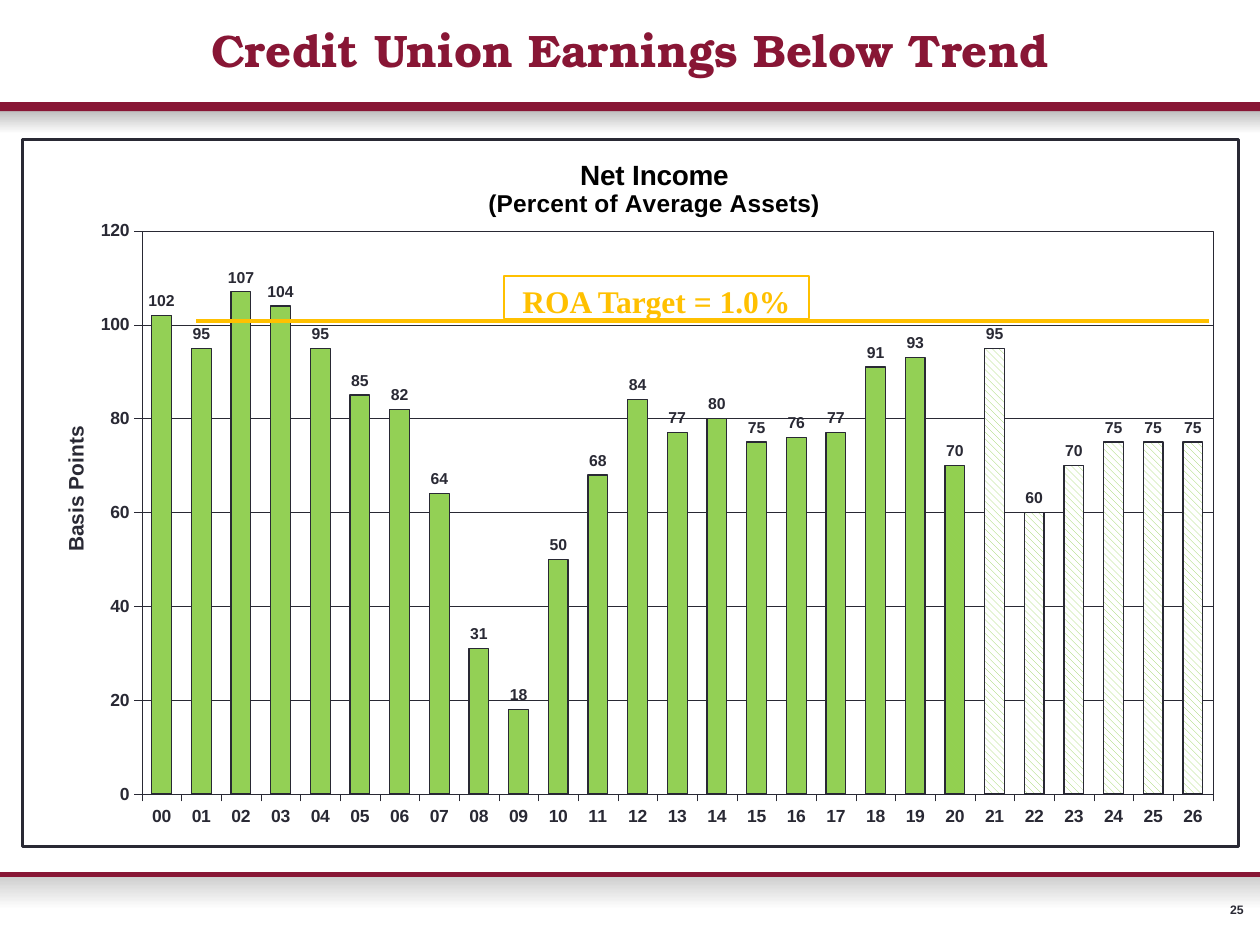
import collections
import lxml.etree
import pptx
import pptx.chart.data
import pptx.dml.color
import pptx.enum.chart
import pptx.enum.dml
import pptx.enum.shapes
import pptx.enum.text
import pptx.oxml
import pptx.oxml.ns
import pptx.util

Cm = pptx.util.Cm
Pt = pptx.util.Pt
qn = pptx.oxml.ns.qn
Box = collections.namedtuple("Box", "left top width height")

MAROON, INK, GREEN, GOLD, WHITE = "881635", "292934", "93D055", "FFC000", "FFFFFF"
INCOME = [102, 95, 107, 104, 95, 85, 82, 64, 31, 18, 50, 68, 84, 77, 80,
          75, 76, 77, 91, 93, 70, 95, 60, 70, 75, 75, 75]
FIRST_PATTERNED = 20


def color(value):
    return pptx.dml.color.RGBColor.from_string(value)


def set_font(font, name, size, value):
    font.name = name
    font.size = Pt(size)
    font.bold = True
    font.color.rgb = color(value)


def set_line(line, value, width):
    line.color.rgb = color(value)
    line.width = Pt(width)


def centimetres(box):
    return [Cm(length) for length in box]


def add_rectangle(page, box, fill):
    shape = page.shapes.add_shape(
        pptx.enum.shapes.MSO_SHAPE.RECTANGLE, *centimetres(box))
    shape.shadow.inherit = False
    shape.fill.solid()
    shape.fill.fore_color.rgb = color(fill)
    shape.line.fill.background()
    return shape


def add_rule(page, box, rule_height, shade):
    band = add_rectangle(page, Box(box.left, box.top + rule_height, box.width,
                                   box.height - rule_height), WHITE)
    band.fill.gradient()
    band.fill.gradient_angle = 270
    for stop, value in zip(band.fill.gradient_stops, (shade, WHITE)):
        stop.color.rgb = color(value)
    add_rectangle(page, box._replace(height=rule_height), MAROON)


def add_title(page, box):
    title = page.shapes.title
    title.left, title.top, title.width, title.height = centimetres(box)
    frame = title.text_frame
    frame.text = "Credit Union Earnings Below Trend"
    frame.vertical_anchor = pptx.enum.text.MSO_ANCHOR.MIDDLE
    para = frame.paragraphs[0]
    para.alignment = pptx.enum.text.PP_ALIGN.CENTER
    set_font(para.font, "TeX Gyre Bonum", 26, MAROON)


def add_page_number(page, box):
    frame = page.shapes.add_textbox(*centimetres(box)).text_frame
    frame.margin_left = frame.margin_right = 0
    frame.margin_top = frame.margin_bottom = 0
    frame.word_wrap = False
    frame.vertical_anchor = pptx.enum.text.MSO_ANCHOR.MIDDLE
    para = frame.paragraphs[0]
    para.text = "25"
    para.alignment = pptx.enum.text.PP_ALIGN.RIGHT
    set_font(para.font, "Arial", 7, INK)


def set_layout(element, target=None, **fractions):
    for old in element.findall(qn("c:layout")):
        element.remove(old)
    layout = lxml.etree.Element(qn("c:layout"))
    manual = lxml.etree.SubElement(layout, qn("c:manualLayout"))
    settings = {"layoutTarget": target} if target else {}
    settings.update(xMode="edge", yMode="edge", **fractions)
    for name, value in settings.items():
        lxml.etree.SubElement(manual, qn("c:" + name)).set("val", str(value))
    text = element.find(qn("c:tx"))
    if text is None:
        element.insert(0, layout)
    else:
        text.addnext(layout)


def outline(width):
    namespaces = pptx.oxml.ns.nsdecls("c", "a")
    return pptx.oxml.parse_xml(
        f'<c:spPr {namespaces}><a:noFill/><a:ln w="{Pt(width)}"><a:solidFill>'
        f'<a:srgbClr val="{INK}"/></a:solidFill></a:ln></c:spPr>')


def format_axes(chart):
    for axis in (chart.category_axis, chart.value_axis):
        axis.major_tick_mark = pptx.enum.chart.XL_TICK_MARK.OUTSIDE
        axis.minor_tick_mark = pptx.enum.chart.XL_TICK_MARK.NONE
        set_font(axis.tick_labels.font, "Arial", 10, INK)
        set_line(axis.format.line, INK, 0.18)
    axis = chart.value_axis
    axis.minimum_scale, axis.maximum_scale, axis.major_unit = 0, 120, 20
    set_line(axis.major_gridlines.format.line, INK, 0.18)
    para = axis.axis_title.text_frame.paragraphs[0]
    para.text = "Basis Points"
    set_font(para.font, "Arial", 12, INK)
    set_layout(axis.axis_title.element, x=0.03, y=0.4)


def format_series(plot):
    plot.gap_width = 100
    plot.vary_by_categories = False
    series = plot.series[0]
    series.format.fill.solid()
    series.format.fill.fore_color.rgb = color(GREEN)
    set_line(series.format.line, INK, 0.73)
    for index in range(FIRST_PATTERNED, len(INCOME)):
        look = series.points[index].format
        look.fill.patterned()
        look.fill.pattern = pptx.enum.dml.MSO_PATTERN.WIDE_DOWNWARD_DIAGONAL
        look.fill.fore_color.rgb = color(GREEN)
        look.fill.back_color.rgb = color("92D050" if index == FIRST_PATTERNED else WHITE)
        set_line(look.line, INK, 0.73)
    labels = series.data_labels
    labels.show_value = True
    labels.position = pptx.enum.chart.XL_LABEL_POSITION.OUTSIDE_END
    set_font(labels.font, "Arial", 9, INK)


def add_income_chart(page, box):
    data = pptx.chart.data.CategoryChartData()
    data.categories = [f"{year:02d}" for year in range(len(INCOME))]
    data.add_series("Series 1", INCOME)
    chart = page.shapes.add_chart(
        pptx.enum.chart.XL_CHART_TYPE.COLUMN_CLUSTERED,
        *centimetres(box), data).chart
    set_font(chart.font, "Arial", 7.5, INK)
    chart.has_legend = False
    frame = chart.chart_title.text_frame
    frame.text = "Net Income\n(Percent of Average Assets)"
    for para, size in zip(frame.paragraphs, (16, 14)):
        set_font(para.font, "Arial", size, "000000")
    set_layout(chart.chart_title.element, x=0.38, y=0.02)
    format_axes(chart)
    format_series(chart.plots[0])
    body = chart.element.find(qn("c:chart"))
    area = body.find(qn("c:plotArea"))
    set_layout(area, "inner", x=0.098, y=0.129, w=0.881, h=0.797)
    area.append(outline(0.18))
    body.addnext(outline(1.5))


def add_target(page, box):
    callout = add_rectangle(
        page, Box(box.left + 9.73, box.top + 2.77, 6.15, 0.86), WHITE)
    set_line(callout.line, GOLD, 1)
    frame = callout.text_frame
    frame.word_wrap = True
    frame.vertical_anchor = pptx.enum.text.MSO_ANCHOR.TOP
    para = frame.paragraphs[0]
    para.text = "ROA Target = 1.0%"
    para.alignment = pptx.enum.text.PP_ALIGN.CENTER
    set_font(para.font, "Times New Roman", 18, GOLD)
    height = Cm(box.top + 3.69)
    line = page.shapes.add_connector(
        pptx.enum.shapes.MSO_CONNECTOR.STRAIGHT,
        Cm(box.left + 3.53), height, Cm(box.left + 23.95), height)
    set_line(line.line, GOLD, 2.25)
    lxml.etree.SubElement(line.element.spPr, qn("a:effectLst"))


def main():
    deck = pptx.Presentation()
    deck.slide_width, deck.slide_height = Cm(25.4), Cm(19.05)
    page = deck.slides.add_slide(deck.slide_layouts[5])
    chart_box = Box(0.43, 2.79, 24.56, 14.3)
    add_rule(page, Box(0, 2.06, 25.4, 0.64), 0.18, "C0C0C0")
    add_rule(page, Box(0, 17.58, 25.4, 0.75), 0.1, "CFCFCF")
    add_page_number(page, Box(24.77, 18.19, 0.3, 0.3))
    add_title(page, Box(0.43, 0.3, 24.56, 1.37))
    add_income_chart(page, chart_box)
    add_target(page, chart_box)
    deck.save("out.pptx")


if __name__ == "__main__":
    main()
